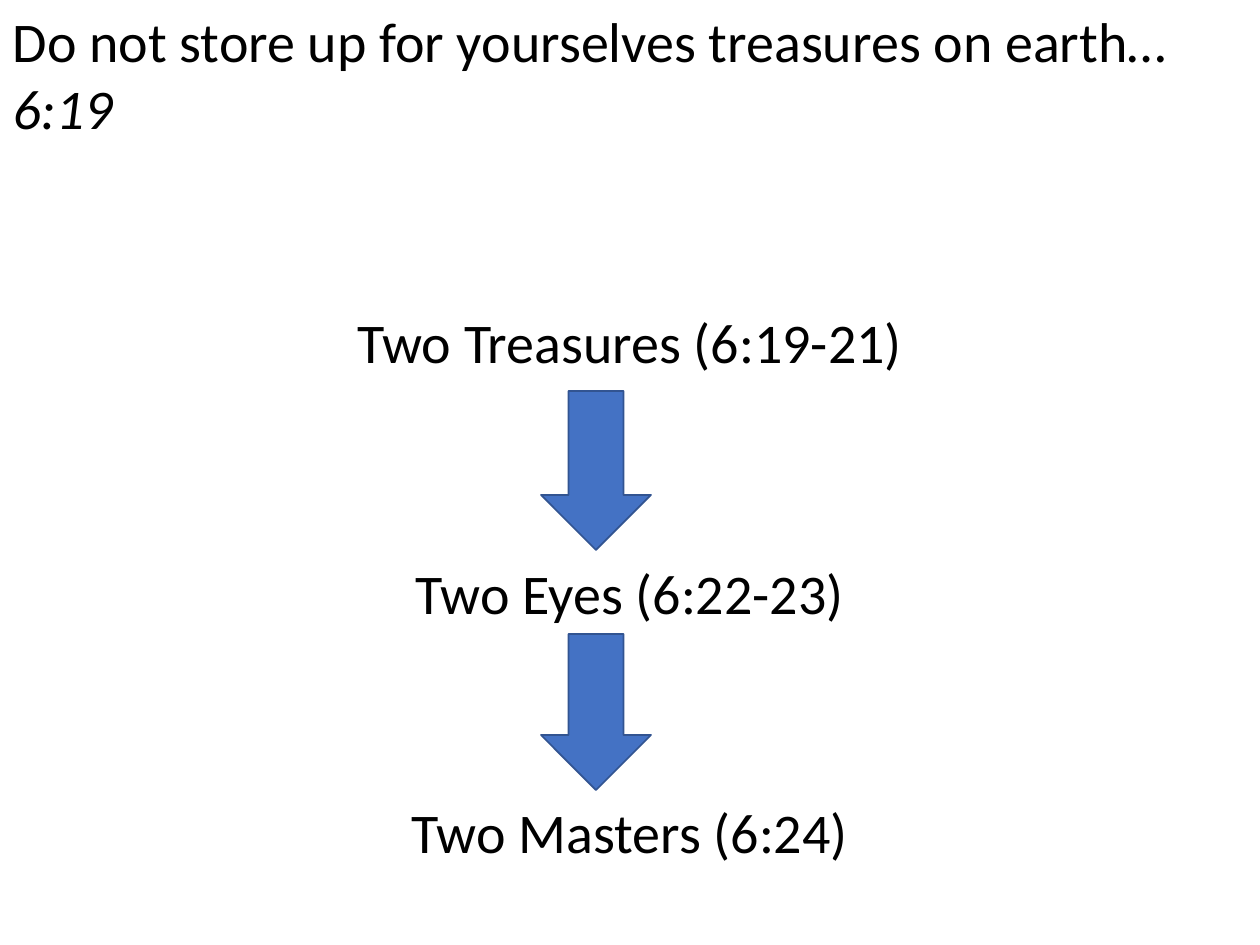
"""Build the slide of three linked pairs from Matthew 6."""
import pptx
import pptx.util
import pptx.dml.color
import pptx.enum.shapes
import pptx.enum.text

BLACK = pptx.dml.color.RGBColor(0x00, 0x00, 0x00)
BLUE = pptx.dml.color.RGBColor(0x44, 0x72, 0xC4)
NAVY = pptx.dml.color.RGBColor(0x32, 0x54, 0x91)
ALIGN = pptx.enum.text.PP_ALIGN
WIDE, HIGH = 1260, 945


def px(count):
    return pptx.util.Emu(round(count * 914400 / 126))


def write(shape, runs, align):
    frame = shape.text_frame
    frame.word_wrap = True
    frame.auto_size = pptx.enum.text.MSO_AUTO_SIZE.SHAPE_TO_FIT_TEXT
    frame.vertical_anchor = pptx.enum.text.MSO_ANCHOR.TOP
    para = frame.paragraphs[0]
    para.alignment = align
    for text, slant in runs:
        run = para.add_run()
        run.text = text
        font = run.font
        font.name = "Calibri"
        font.size = pptx.util.Pt(32)
        font.italic = slant
        font.color.rgb = BLACK


def add_title(slide, runs):
    title = slide.shapes.title
    title.left, title.top = px(0), px(0)
    title.width, title.height = px(WIDE), px(149)
    write(title, runs, ALIGN.LEFT)


def add_label(slide, top, text):
    box = slide.shapes.add_textbox(px(0), px(top), px(WIDE), px(81))
    write(box, [(text, False)], ALIGN.CENTER)


def add_arrow(slide, top, height):
    kind = pptx.enum.shapes.MSO_SHAPE.DOWN_ARROW
    arrow = slide.shapes.add_shape(kind, px(541), px(top), px(110), px(height))
    arrow.shadow.inherit = False
    arrow.fill.solid()
    arrow.fill.fore_color.rgb = BLUE
    arrow.line.color.rgb = NAVY
    arrow.line.width = pptx.util.Pt(1)


def main():
    deck = pptx.Presentation()
    deck.slide_width, deck.slide_height = px(WIDE), px(HIGH)
    slide = deck.slides.add_slide(deck.slide_layouts[5])
    add_title(slide, [
        ("Do not store up for yourselves treasures on earth… ", False),
        ("6:19", True),
    ])
    add_label(slide, 301, "Two Treasures (6:19-21)")
    add_arrow(slide, 391, 159)
    add_label(slide, 552, "Two Eyes (6:22-23)")
    add_arrow(slide, 634, 156)
    add_label(slide, 791, "Two Masters (6:24)")
    deck.save("out.pptx")


if __name__ == "__main__":
    main()
